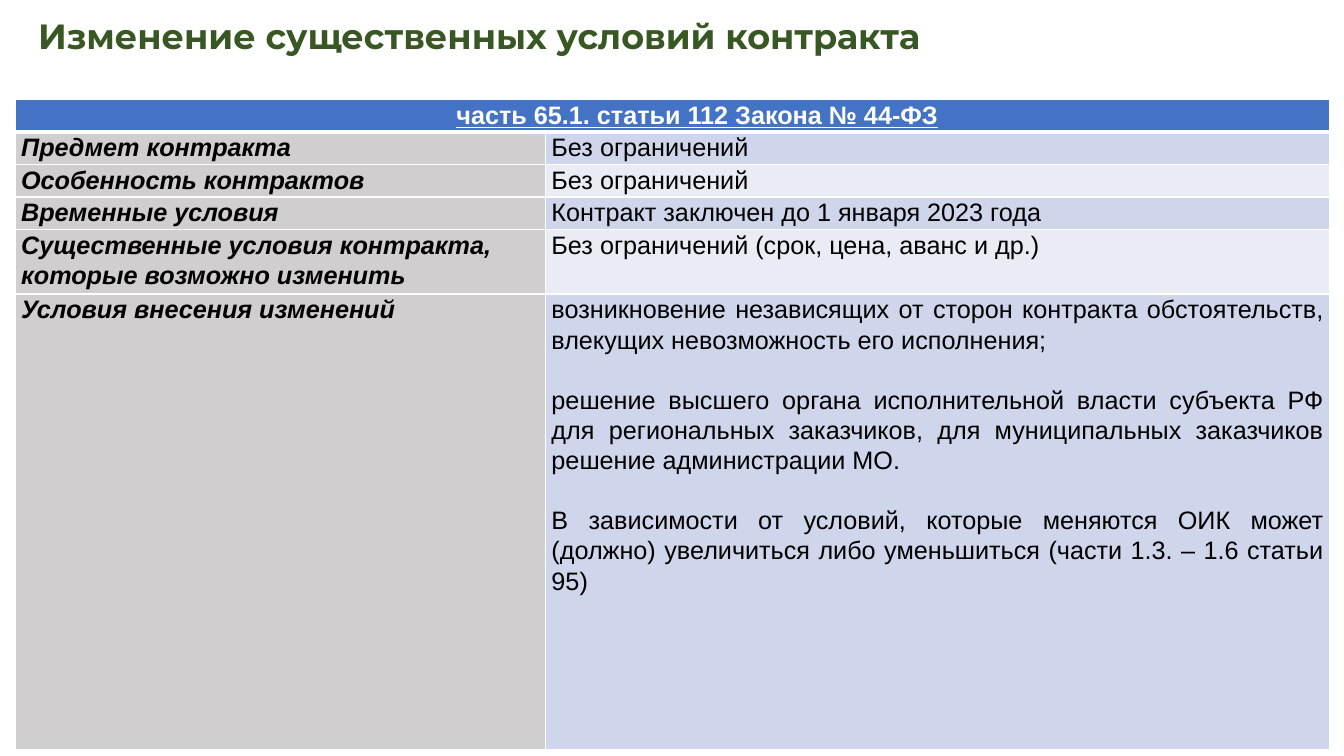
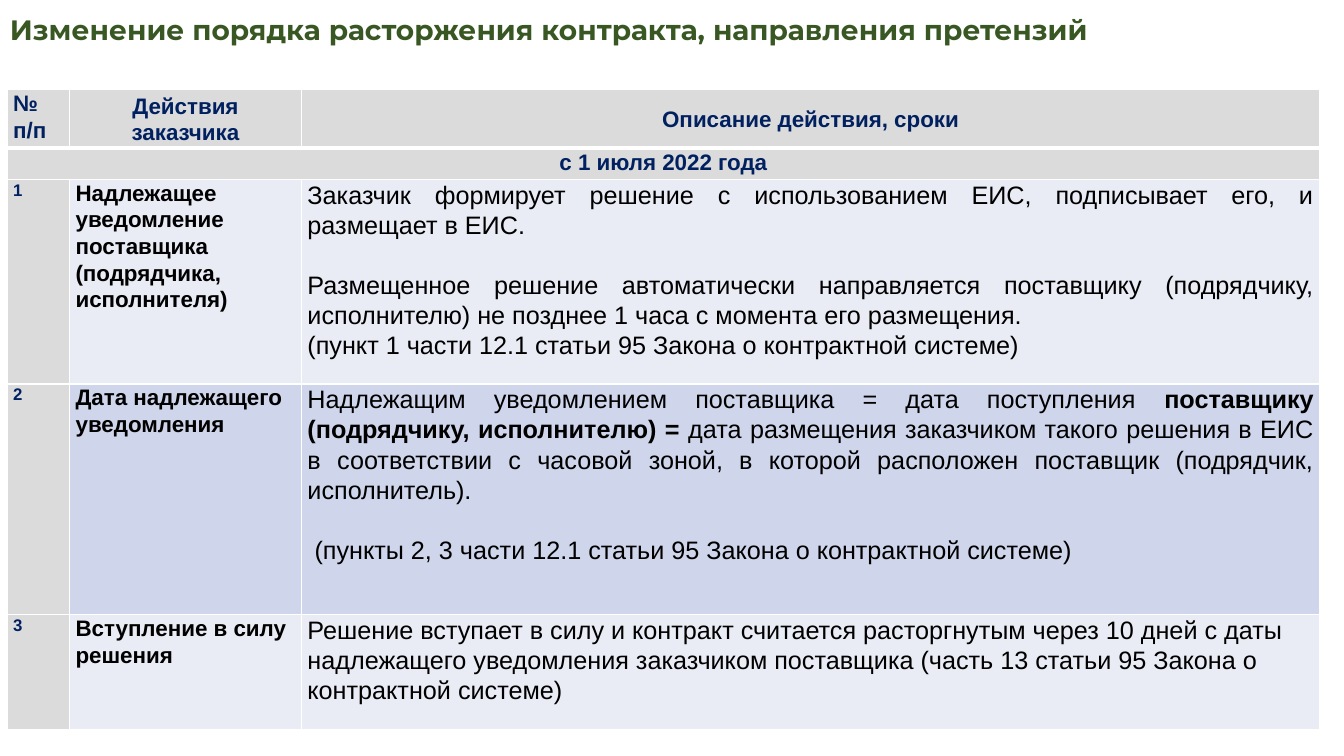
from lxml import etree
from pptx import Presentation
from pptx.dml.color import RGBColor
from pptx.enum.text import MSO_ANCHOR, PP_ALIGN
from pptx.oxml.ns import qn
from pptx.util import Inches, Pt

LEFT, CENTER, JUSTIFY = PP_ALIGN.LEFT, PP_ALIGN.CENTER, PP_ALIGN.JUSTIFY
TOP, MIDDLE = MSO_ANCHOR.TOP, MSO_ANCHOR.MIDDLE

COLORS = {
    "title": "385723", "white": "FFFFFF", "black": "000000", "navy": "002060",
    "blue": "4472C4", "label": "D0CECE", "grey": "DBDBDB",
    "dark_band": "CFD5EA", "light_band": "E9EBF5",
}
TITLE = {"name": "Montserrat", "bold": True}
BODY = {"name": "Arial", "size": Pt(18), "bold": False}
LABEL = {**BODY, "bold": True, "italic": True}
BANNER = {**BODY, "bold": True, "underline": True}
HEADING = {**BODY, "size": Pt(16), "bold": True}
NUMBER = {**HEADING, "size": Pt(12)}
CELL_MARGINS = {
    "margin_left": Inches(0.06), "margin_right": Inches(0.06),
    "margin_top": 0, "margin_bottom": 0,
}
LINE_SPACING = 1.07
BLANK_LINE = 21.5


def rgb(name):
    return RGBColor.from_string(COLORS[name])


def set_attrs(target, values):
    for name, value in values.items():
        setattr(target, name, value)


def add_run(p, text, font, color):
    r = p.add_run()
    r.text = text
    set_attrs(r.font, font)
    r.font.color.rgb = rgb(color)


def add_title(slide, box, text, size, wrap):
    s = slide.shapes.add_textbox(*map(Inches, box))
    tf = s.text_frame
    tf.word_wrap = wrap
    add_run(tf.paragraphs[0], text, {**TITLE, "size": Pt(size)}, "title")


def para(*runs, align=LEFT, gap=0, indent=0):
    return {"runs": runs, "align": align, "gap": gap, "indent": indent}


def cell_spec(paras, fill, font=BODY, color="black", anchor=TOP, span=1):
    if isinstance(paras, str):
        paras = [para(paras)]
    return {"paras": paras, "fill": fill, "font": font, "color": color,
            "anchor": anchor, "span": span}


def set_borders(cell, row):
    widths = {"a:lnL": 1, "a:lnR": 1,
              "a:lnT": 3 if row == 1 else 1, "a:lnB": 3 if row == 0 else 1}
    tc_pr = cell._tc.get_or_add_tcPr()
    for tag, width in widths.items():
        ln = etree.SubElement(tc_pr, qn(tag), w=str(Pt(width)))
        fill = etree.SubElement(ln, qn("a:solidFill"))
        etree.SubElement(fill, qn("a:srgbClr"), val=COLORS["white"])


def fill_cell(cell, spec):
    cell.fill.solid()
    cell.fill.fore_color.rgb = rgb(spec["fill"])
    cell.vertical_anchor = spec["anchor"]
    set_attrs(cell, CELL_MARGINS)
    tf = cell.text_frame
    for i, item in enumerate(spec["paras"]):
        p = tf.add_paragraph() if i else tf.paragraphs[0]
        p.alignment = item["align"]
        p.line_spacing = LINE_SPACING
        if item["gap"]:
            p.space_before = Pt(item["gap"])
        if item["indent"]:
            p._p.get_or_add_pPr().set("indent", str(Inches(item["indent"])))
        for run in item["runs"]:
            text, extra = run if isinstance(run, tuple) else (run, {})
            add_run(p, text, {**spec["font"], **extra}, spec["color"])


def add_grid(slide, left, top, widths, heights, rows):
    box = (left, top, sum(widths), sum(heights))
    frame = slide.shapes.add_table(len(heights), len(widths), *map(Inches, box))
    table = frame.table
    for column, width in zip(table.columns, widths):
        column.width = Inches(width)
    for row, height in zip(table.rows, heights):
        row.height = Inches(height)
    for r, specs in enumerate(rows):
        for c in range(len(widths)):
            set_borders(table.cell(r, c), r)
        for c, spec in enumerate(specs):
            cell = table.cell(r, c)
            if spec["span"] > 1:
                cell.merge(table.cell(r, c + spec["span"] - 1))
            fill_cell(cell, spec)


def build_terms_slide(slide):
    add_title(slide, (0.28, 0.09, 9.39, 0.52),
              "Изменение существенных условий контракта", 25, False)
    conditions = [
        para("возникновение независящих от сторон контракта обстоятельств, "
             "влекущих невозможность его исполнения;", align=JUSTIFY),
        para("решение высшего органа исполнительной власти субъекта РФ для "
             "региональных заказчиков, для муниципальных заказчиков решение "
             "администрации МО.", align=JUSTIFY, gap=BLANK_LINE),
        para("В зависимости от условий, которые меняются ОИК может (должно) "
             "увеличиться либо уменьшиться (части 1.3. – 1.6 статьи 95)",
             align=JUSTIFY, gap=BLANK_LINE),
    ]
    terms = [
        ("Предмет контракта", "Без ограничений"),
        ("Особенность контрактов", "Без ограничений"),
        ("Временные условия", "Контракт заключен до 1 января 2023 года"),
        ("Существенные условия контракта, которые возможно изменить",
         "Без ограничений (срок, цена, аванс и др.)"),
        ("Условия внесения изменений", conditions),
    ]
    banner = para("часть 65.1. статьи 112 Закона № 44-ФЗ",
                  align=CENTER, indent=0.49)
    rows = [[cell_spec([banner], "blue", BANNER, "white", span=2)]]
    for i, (label, value) in enumerate(terms):
        band = "light_band" if i % 2 else "dark_band"
        rows.append([cell_spec(label, "label", LABEL), cell_spec(value, band)])
    add_grid(slide, 0.15, 0.99, (5.26, 7.78),
             [0.28] * 4 + [0.57, 4.52], rows)


def build_termination_slide(slide):
    add_title(slide, (0, 0.08, 13.17, 0.44),
              "Изменение порядка расторжения контракта, направления претензий",
              20, True)
    notice = [
        para("Заказчик формирует решение с использованием ЕИС, подписывает "
             "его, и размещает в ЕИС.", align=JUSTIFY),
        para("Размещенное решение автоматически направляется поставщику "
             "(подрядчику, исполнителю) не позднее 1 часа с момента его "
             "размещения.", align=JUSTIFY, gap=BLANK_LINE),
        para("(пункт 1 части 12.1 статьи 95 Закона о контрактной системе)",
             align=JUSTIFY),
    ]
    notice_date = [
        para("Надлежащим уведомлением поставщика = дата поступления ",
             ("поставщику (подрядчику, исполнителю) = ", {"bold": True}),
             "дата размещения заказчиком такого решения в ЕИС в соответствии "
             "с часовой зоной, в которой расположен поставщик (подрядчик, "
             "исполнитель).", align=JUSTIFY),
        para("(пункты 2, 3 части 12.1 статьи 95 Закона о контрактной системе)",
             align=JUSTIFY, gap=BLANK_LINE, indent=0.07),
    ]
    steps = [
        ("Надлежащее уведомление поставщика (подрядчика, исполнителя)", notice),
        ("Дата надлежащего уведомления", notice_date),
        ("Вступление в силу решения",
         "Решение вступает в силу и контракт считается расторгнутым через 10 "
         "дней с даты надлежащего уведомления заказчиком поставщика (часть 13 "
         "статьи 95 Закона о контрактной системе)"),
    ]
    header = [cell_spec("№ п/п", "grey", HEADING, "navy")]
    for text in ("Действия заказчика", "Описание действия, сроки"):
        header.append(cell_spec([para(text, align=CENTER)], "grey",
                                HEADING, "navy", MIDDLE))
    period = para("с 1 июля 2022 года", align=CENTER)
    rows = [header, [cell_spec([period], "grey", HEADING, "navy", span=3)]]
    for number, (action, details) in enumerate(steps, 1):
        band = "light_band" if number % 2 else "dark_band"
        rows.append([cell_spec(str(number), "grey", NUMBER, "navy"),
                     cell_spec(action, band, HEADING),
                     cell_spec(details, band)])
    add_grid(slide, 0.07, 0.89, (0.62, 2.3, 10.1),
             (0.58, 0.31, 2.03, 2.29, 1.14), rows)


def main():
    prs = Presentation()
    prs.slide_width, prs.slide_height = Inches(13.33), Inches(7.5)
    for build in (build_terms_slide, build_termination_slide):
        build(prs.slides.add_slide(prs.slide_layouts[6]))
    prs.save("out.pptx")


if __name__ == "__main__":
    main()
